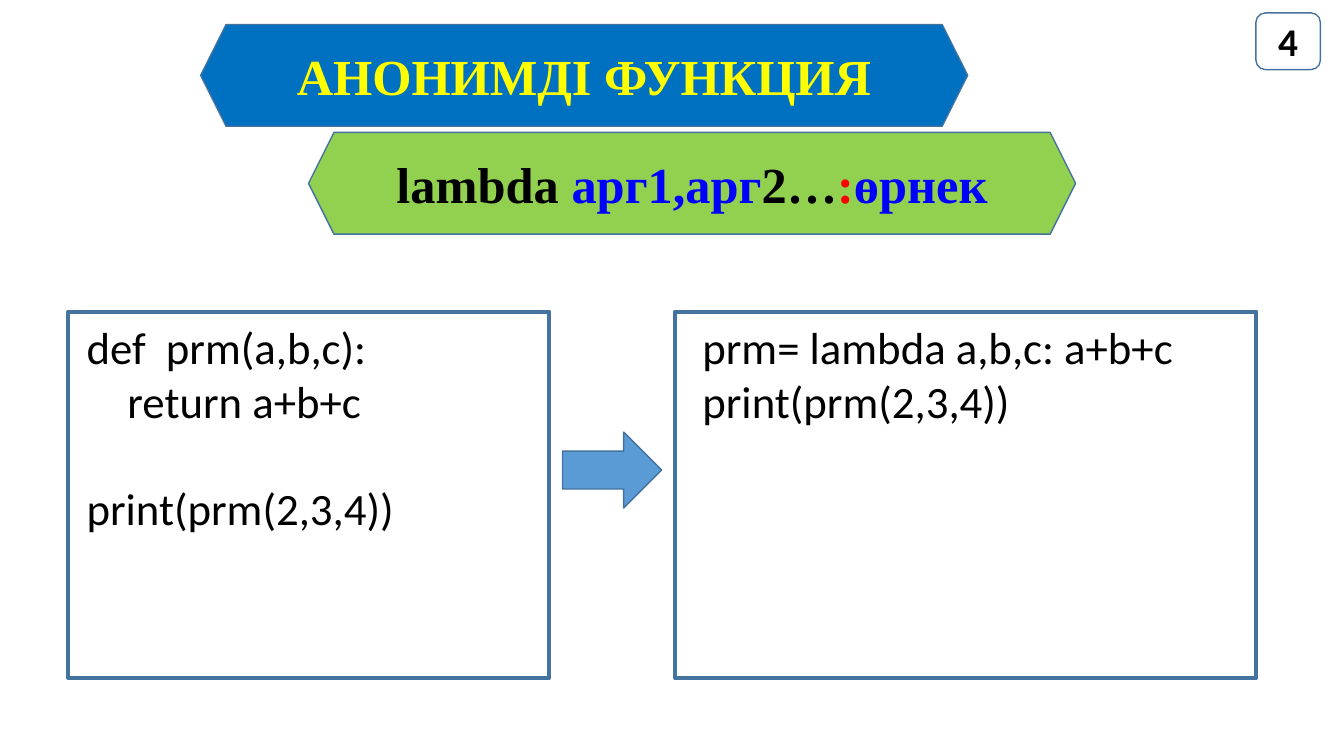
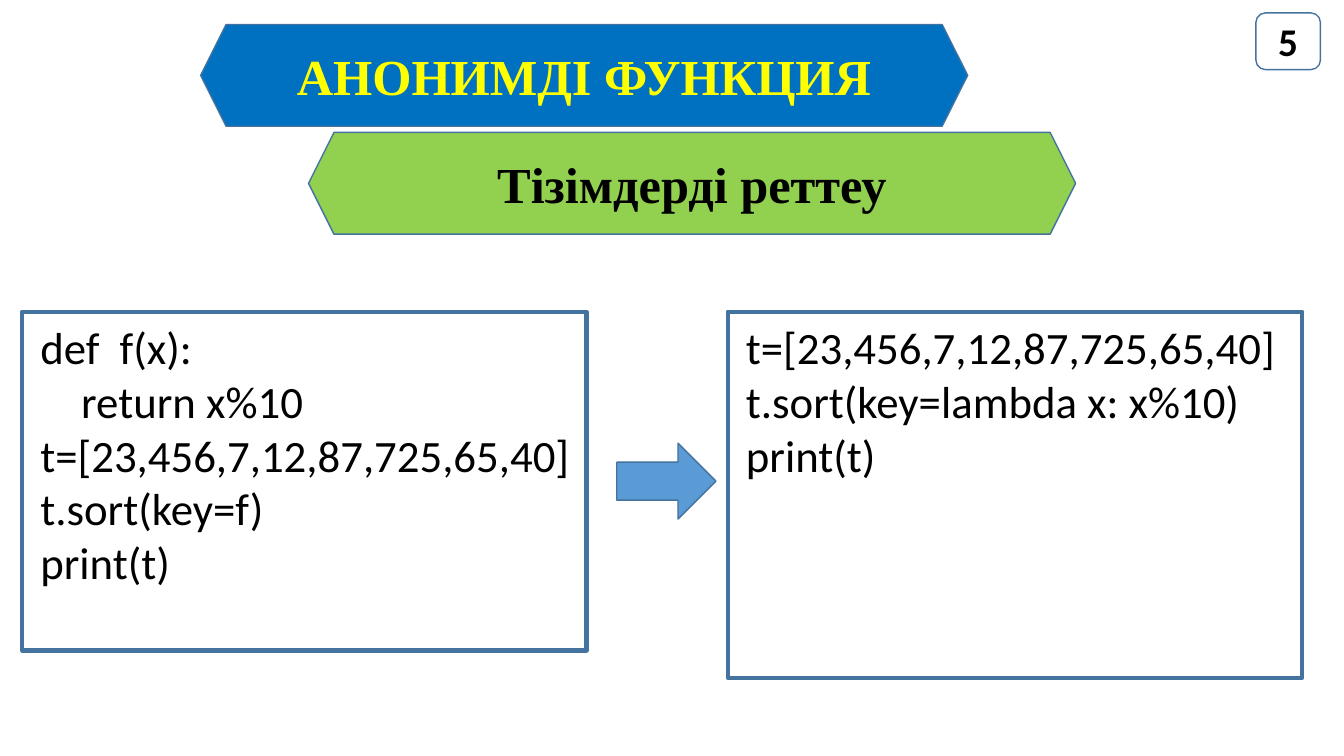
from lxml import etree
from pptx import Presentation
from pptx.dml.color import RGBColor
from pptx.enum import shapes, text
from pptx.oxml import ns
from pptx.util import Pt

BLUE = RGBColor(0x00, 0x70, 0xC0)
GREEN = RGBColor(0x92, 0xD0, 0x50)
SKY = RGBColor(0x5B, 0x9B, 0xD5)
EDGE = RGBColor(0x43, 0x73, 0x9E)
GOLD = RGBColor(0xFF, 0xFF, 0x00)
BLACK = RGBColor(0x00, 0x00, 0x00)
INK = RGBColor(0x00, 0x00, 0xFF)
RED = RGBColor(0xFF, 0x00, 0x00)

SERIF = "Times New Roman"
SANS = "Calibri"
LINE = 38.4
TAB = 29.2
STEP = 77.1
KIND = shapes.MSO_SHAPE


class Deck:
    def __init__(self):
        self.file = Presentation()
        self.file.slide_width = Pt(960)
        self.file.slide_height = Pt(540)
        self.slide = None

    def start(self, title, number):
        self.slide = self.file.slides.add_slide(self.file.slide_layouts[3])
        band = self.banner(0, BLUE)
        head = self.slide.shapes.title
        self.place(head, 143.3, 17.5, 547.9, 72.7)
        head.element.addprevious(band.element)
        self.label(head, [(title, GOLD)], 36, SERIF)
        badge = self.shape(KIND.ROUNDED_RECTANGLE, 897.1, 9.2, 46.1, 40.5)
        self.label(badge, [(number, BLACK)], 28, SANS)

    def place(self, item, left, top, width, height):
        item.left, item.top = Pt(left), Pt(top)
        item.width, item.height = Pt(width), Pt(height)

    def paint(self, item, fill=None, width=1):
        if fill is None:
            item.fill.background()
        else:
            item.fill.solid()
            item.fill.fore_color.rgb = fill
        item.line.color.rgb = EDGE
        item.line.width = Pt(width)

    def shape(self, kind, left, top, width, height, fill=None):
        item = self.slide.shapes.add_shape(kind, Pt(left), Pt(top), Pt(width), Pt(height))
        item.shadow.inherit = False
        self.paint(item, fill)
        return item

    def banner(self, step, fill):
        shift = step * STEP
        return self.shape(KIND.HEXAGON, 143.3 + shift, 17.5 + shift, 547.9, 72.7, fill)

    def topic(self, parts):
        self.label(self.banner(1, GREEN), parts, 36, SERIF)

    def run(self, para, words, size, font, color, bold):
        run = para.add_run()
        run.text = words
        run.font.size = Pt(size)
        run.font.name = font
        run.font.bold = bold
        run.font.color.rgb = color

    def label(self, item, parts, size, font):
        frame = item.text_frame
        frame.word_wrap = True
        frame.auto_size = text.MSO_AUTO_SIZE.NONE
        frame.vertical_anchor = text.MSO_ANCHOR.MIDDLE
        para = frame.paragraphs[0]
        para.alignment = text.PP_ALIGN.CENTER
        for words, color in parts:
            self.run(para, words, size, font, color, True)

    def code(self, index, left, width, lines, height=261.5, margin=7.2):
        box = self.slide.placeholders[index]
        self.place(box, left, 222.6, width, height)
        self.paint(box, width=3)
        frame = box.text_frame
        frame.word_wrap = True
        frame.auto_size = text.MSO_AUTO_SIZE.NONE
        frame.vertical_anchor = text.MSO_ANCHOR.TOP
        frame.margin_left = frame.margin_top = frame.margin_right = Pt(5.8)
        frame.margin_bottom = 0
        for row, (words, depth, gap) in enumerate(lines):
            para = frame.add_paragraph() if row else frame.paragraphs[0]
            para.line_spacing = Pt(LINE)
            para.space_before = Pt(gap * LINE)
            para.space_after = Pt(0)
            props = para._p.get_or_add_pPr()
            props.set("marL", str(Pt(margin + depth * TAB)))
            props.set("indent", "0")
            etree.SubElement(props, ns.qn("a:buNone"))
            self.run(para, words, 32, SANS, BLACK, False)

    def arrow(self, left, top):
        self.shape(KIND.RIGHT_ARROW, left, top, 70.8, 54.2, SKY)


def main():
    deck = Deck()
    title = "АНОНИМДІ ФУНКЦИЯ"
    data = "t=[23,456,7,12,87,725,65,40]"

    deck.start(title, "4")
    deck.topic([("lambda ", BLACK), ("арг1,арг", INK), ("2…", BLACK),
                (":", RED), ("өрнек", INK)])
    deck.code(1, 48.8, 343.6, [("def  prm(a,b,c):", 0, 0), ("return a+b+c", 1, 0),
                               ("print(prm(2,3,4))", 0, 1)])
    deck.code(2, 482.2, 415.2, [("prm= lambda a,b,c: a+b+c", 0, 0),
                                ("print(prm(2,3,4))", 0, 0)], margin=13.7)
    deck.arrow(401.8, 308.7)

    deck.start(title, "5")
    deck.topic([("Тізімдерді реттеу", BLACK)])
    deck.code(1, 15.8, 403.2, [("def  f(x):", 0, 0), ("return x%10", 1, 0), (data, 0, 0),
                               ("t.sort(key=f)", 0, 0), ("print(t)", 0, 0)], height=242)
    deck.code(2, 519.8, 410.4, [(data, 0, 0), ("t.sort(key=lambda x: x%10)", 0, 0),
                                ("print(t)", 0, 0)])
    deck.arrow(440.6, 316.6)

    deck.file.save("out.pptx")


if __name__ == "__main__":
    main()
